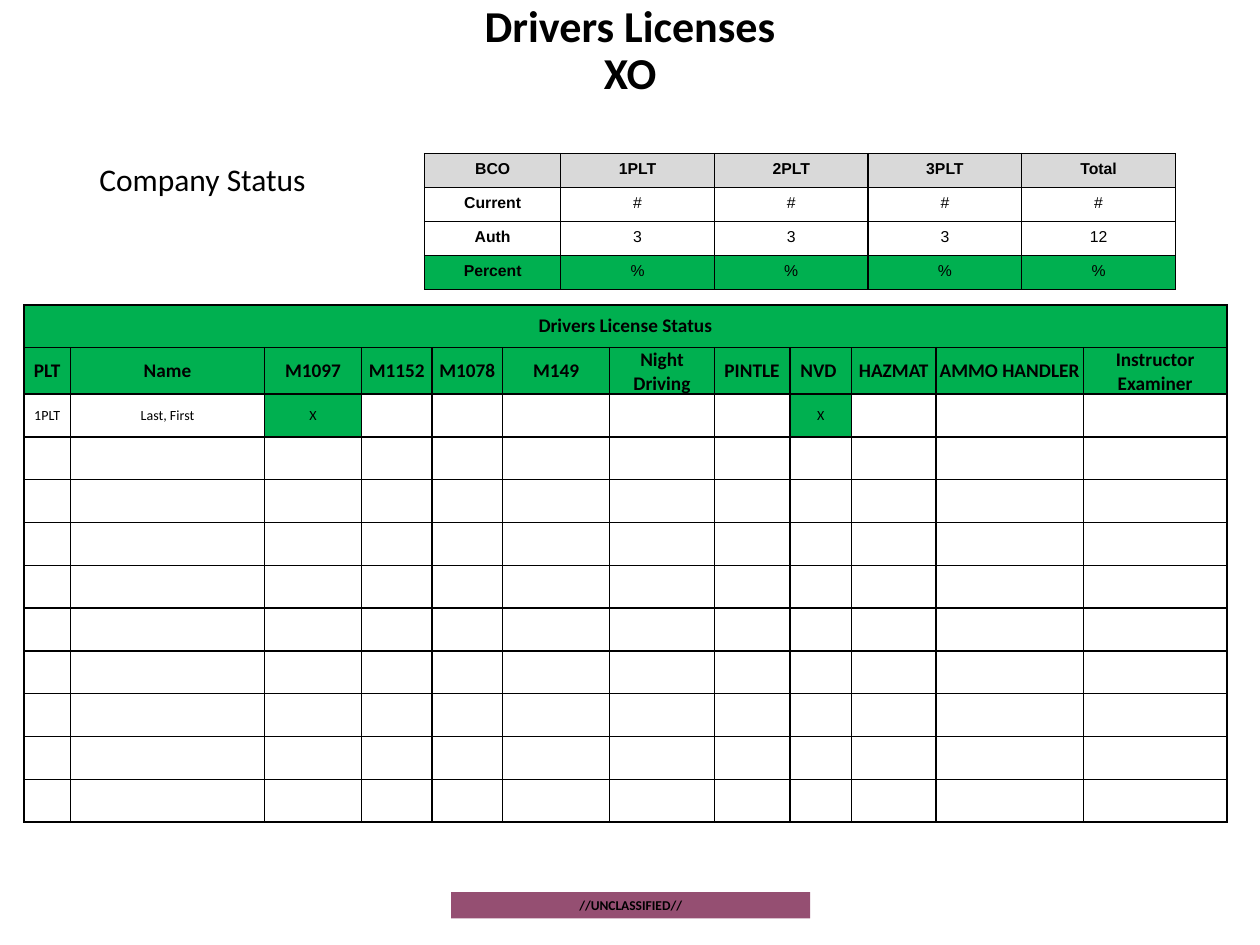
import dataclasses

import lxml.etree
import pptx
import pptx.dml.color
import pptx.enum.shapes
import pptx.enum.text
import pptx.oxml.ns
import pptx.util

Inches = pptx.util.Inches
CENTER = pptx.enum.text.PP_ALIGN.CENTER
LEFT = pptx.enum.text.PP_ALIGN.LEFT
MIDDLE = pptx.enum.text.MSO_ANCHOR.MIDDLE
TOP = pptx.enum.text.MSO_ANCHOR.TOP


@dataclasses.dataclass(frozen=True)
class Theme:
    """Hold the colours, fonts and type sizes of the slide."""
    ink: str = "000000"
    paper: str = "FFFFFF"
    green: str = "00B050"
    gray: str = "D9D9D9"
    plum: str = "954F72"
    body_font: str = "Calibri"
    summary_font: str = "Arial"
    title_size: float = 25.2
    label_size: float = 18
    header_size: float = 11
    summary_size: float = 9
    entry_size: float = 8
    footer_size: float = 7.7
    border: float = 1


THEME = Theme()
LICENSE_HEADERS = ["PLT", "Name", "M1097", "M1152", "M1078", "M149", "Night Driving",
                   "PINTLE", "NVD ", "HAZMAT", "AMMO HANDLER", "Instructor\nExaminer"]
LICENSE_WIDTHS = [0.37, 1.54, 0.77, 0.56, 0.56, 0.85, 0.83, 0.6, 0.49, 0.67, 1.17, 1.14]
LICENSE_ENTRY = {"PLT": "1PLT", "Name": "Last, First", "M1097": "X", "NVD ": "X"}
LICENSE_ROWS = 10
SUMMARY_ROWS = [
    (["BCO", "1PLT", "2PLT", "3PLT", "Total"], THEME.gray),
    (["Current", "#", "#", "#", "#"], THEME.paper),
    (["Auth", "3", "3", "3", "12"], THEME.paper),
    (["Percent", "%", "%", "%", "%"], THEME.green),
]


def fill_solid(target, color):
    """Give a shape or cell a solid fill."""
    target.fill.solid()
    target.fill.fore_color.rgb = pptx.dml.color.RGBColor.from_string(color)


def write_text(frame, text, size, bold=False, font=THEME.body_font, align=CENTER, spacing=None):
    """Write text into a frame in one format."""
    frame.text = text
    formats = {"name": font, "size": pptx.util.Pt(size), "bold": bold}
    for paragraph in frame.paragraphs:
        paragraph.alignment = align
        paragraph.line_spacing = spacing
        for run in paragraph.runs:
            for name, value in formats.items():
                setattr(run.font, name, value)
            run.font.color.rgb = pptx.dml.color.RGBColor.from_string(THEME.ink)


def add_label(slide, box, text, anchor=TOP, **text_format):
    """Place a wrapping text box in the given box."""
    frame = slide.shapes.add_textbox(*map(Inches, box)).text_frame
    frame.word_wrap = True
    frame.vertical_anchor = anchor
    write_text(frame, text, **text_format)


def add_borders(cell):
    """Draw a thin line on all four sides of a cell."""
    properties = cell._tc.get_or_add_tcPr()
    qn = pptx.oxml.ns.qn
    for side in ("a:lnL", "a:lnR", "a:lnT", "a:lnB"):
        line = lxml.etree.SubElement(properties, qn(side), w=str(pptx.util.Pt(THEME.border)))
        solid = lxml.etree.SubElement(line, qn("a:solidFill"))
        lxml.etree.SubElement(solid, qn("a:srgbClr"), val=THEME.ink)


def style_cell(cell, text, color, margins=None, anchor=TOP, **text_format):
    """Give a cell its borders, fill and text."""
    add_borders(cell)
    fill_solid(cell, color)
    cell.vertical_anchor = anchor
    if margins is not None:
        for side in ("left", "right", "top", "bottom"):
            setattr(cell, f"margin_{side}", Inches(margins))
    write_text(cell.text_frame, text, **text_format)


def add_plain_table(slide, box, row_count, widths):
    """Add a table without banding and with the given column widths."""
    table = slide.shapes.add_table(row_count, len(widths), *map(Inches, box)).table
    table.first_row = table.horz_banding = False
    for column, width in zip(table.columns, widths):
        column.width = Inches(width)
    for row in table.rows:
        row.height = Inches(round(box[3] / row_count, 2))
    return table


def add_license_table(slide, box):
    """Place the drivers license table with its banner, headers and entries."""
    blank = [""] * len(LICENSE_HEADERS)
    entry = [LICENSE_ENTRY.get(header, "") for header in LICENSE_HEADERS]
    rows = [["Drivers License Status"] + blank[1:], LICENSE_HEADERS, entry]
    rows += [blank] * (LICENSE_ROWS - 1)
    table = add_plain_table(slide, box, len(rows), LICENSE_WIDTHS)
    for row_index, texts in enumerate(rows):
        heading = row_index < 2
        for column_index, text in enumerate(texts):
            style_cell(table.cell(row_index, column_index), text,
                       THEME.green if heading or text == "X" else THEME.paper,
                       margins=0, anchor=MIDDLE, bold=heading,
                       size=THEME.header_size if heading else THEME.entry_size)
    table.cell(0, 0).merge(table.cell(0, len(LICENSE_HEADERS) - 1))


def add_summary_table(slide, box):
    """Place the company status table."""
    table = add_plain_table(slide, box, len(SUMMARY_ROWS), [1.08] + [1.22] * 4)
    for row_index, (texts, color) in enumerate(SUMMARY_ROWS):
        for column_index, text in enumerate(texts):
            style_cell(table.cell(row_index, column_index), text, color,
                       size=THEME.summary_size, font=THEME.summary_font,
                       bold=row_index == 0 or column_index == 0)


def add_classification(slide, box):
    """Place the classification bar."""
    shape = slide.shapes.add_shape(pptx.enum.shapes.MSO_SHAPE.RECTANGLE, *map(Inches, box))
    shape.shadow.inherit = False
    fill_solid(shape, THEME.plum)
    shape.line.fill.background()
    frame = shape.text_frame
    margins = {"margin_left": 0.07, "margin_right": 0.07, "margin_top": 0.04, "margin_bottom": 0.04}
    for name, value in margins.items():
        setattr(frame, name, Inches(value))
    write_text(frame, "//UNCLASSIFIED//", THEME.footer_size, bold=True)


def main():
    """Build the slide and save it."""
    presentation = pptx.Presentation()
    presentation.slide_width, presentation.slide_height = Inches(10), Inches(7.5)
    slide = presentation.slides.add_slide(presentation.slide_layouts[6])
    add_classification(slide, (3.58, 7.08, 2.85, 0.21))
    add_label(slide, (0.69, 0.09, 8.62, 0.64), "Drivers Licenses\nXO", anchor=MIDDLE,
              size=THEME.title_size, bold=True, spacing=0.9)
    add_license_table(slide, (0.19, 2.42, 9.56, 4.11))
    add_summary_table(slide, (3.37, 1.22, 5.95, 1.07))
    add_label(slide, (0.69, 1.22, 2.5, 0.4), "Company Status", size=THEME.label_size, align=LEFT)
    presentation.save("out.pptx")


if __name__ == "__main__":
    main()
